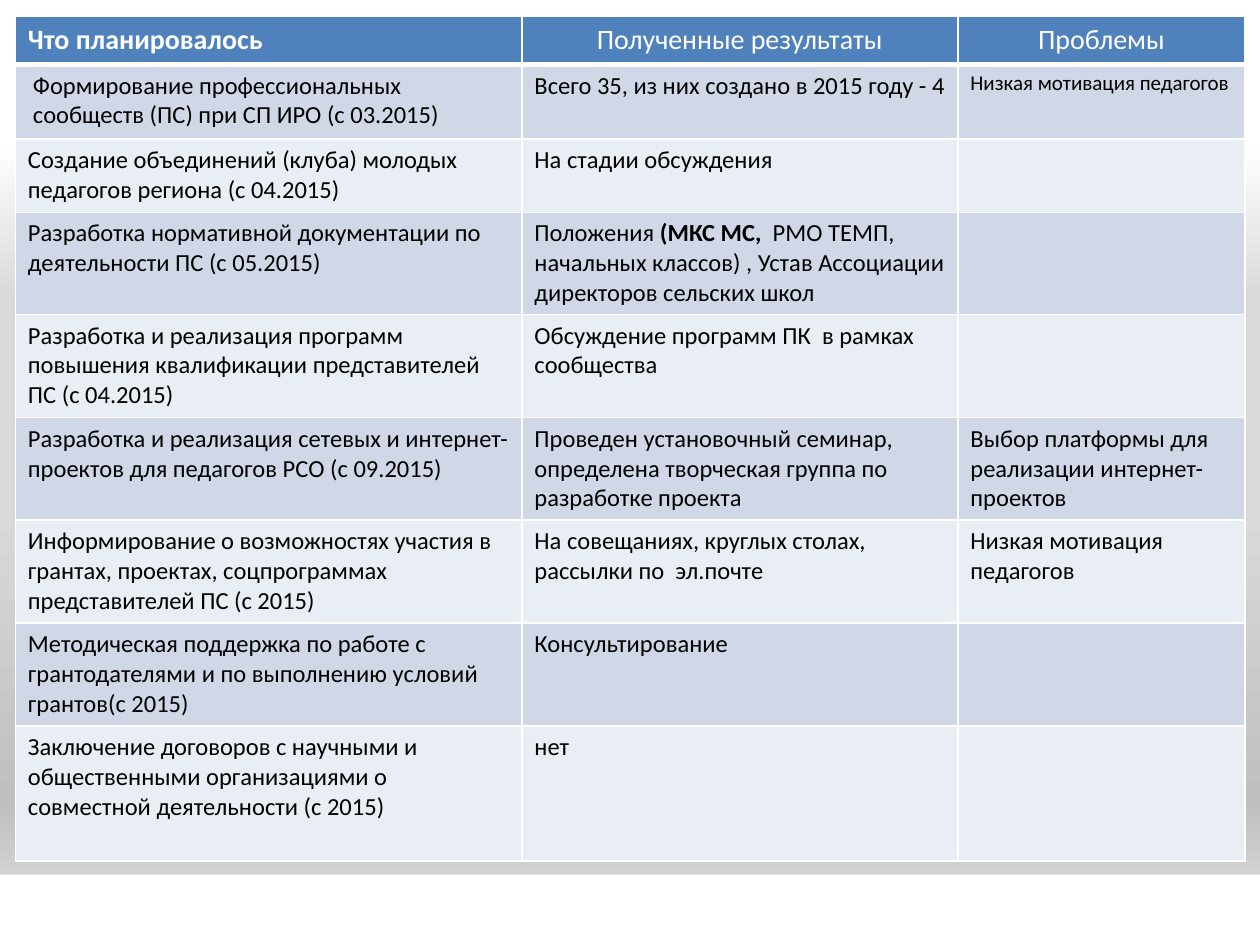
from dataclasses import dataclass

from lxml.etree import SubElement
from pptx import Presentation
from pptx.dml.color import RGBColor
from pptx.enum.shapes import MSO_SHAPE
from pptx.enum.text import PP_ALIGN
from pptx.oxml.ns import qn
from pptx.util import Cm, Pt


@dataclass(frozen=True)
class Theme:
    font: str = "Calibri"
    header_size: int = 16
    body_size: int = 14
    small_size: int = 12
    white: str = "FFFFFF"
    black: str = "000000"
    header_fill: str = "4F81BD"
    bands: tuple = ("D0D8E8", "E9EDF4")
    gradient: tuple = ((0, "FFFFFF"), (15, "FFFFFF"), (32, "D9D9D9"),
                       (54, "D9D9D9"), (85, "BFBFBF"), (100, "E6E6E6"))


THEME = Theme()
COLUMN_WIDTHS = (10.21, 8.79, 5.79)
ROW_HEIGHTS = (0.97, 1.5, 1.48, 2.06, 2.08, 2.06, 2.08, 2.08, 2.72)
HEADERS = ("Что планировалось", "Полученные результаты", "Проблемы")
ROWS = (
    ("Формирование профессиональных сообществ (ПС) при СП ИРО (с 03.2015)",
     "Всего 35, из них создано в 2015 году - 4",
     "Низкая мотивация педагогов"),
    ("Создание объединений (клуба) молодых педагогов региона (с 04.2015)",
     "На стадии обсуждения", ""),
    ("Разработка нормативной документации по деятельности ПС (с 05.2015)",
     (("Положения ", False), ("(МКС МС,  ", True),
      ("РМО ТЕМП, начальных классов) , Устав Ассоциации директоров сельских школ", False)), ""),
    ("Разработка и реализация программ повышения квалификации представителей ПС (с 04.2015)",
     "Обсуждение программ ПК  в рамках сообщества", ""),
    ("Разработка и реализация сетевых и интернет-проектов для педагогов РСО (с 09.2015)",
     "Проведен установочный семинар, определена творческая группа по разработке проекта",
     "Выбор платформы для реализации интернет-проектов"),
    ("Информирование о возможностях участия в грантах, проектах, соцпрограммах "
     "представителей ПС (с 2015)",
     "На совещаниях, круглых столах, рассылки по  эл.почте",
     "Низкая мотивация педагогов"),
    ("Методическая поддержка по работе с грантодателями и по выполнению условий "
     "грантов(с 2015)", "Консультирование", ""),
    ("Заключение договоров с научными и общественными организациями о совместной "
     "деятельности (с 2015)", "нет", ""),
)


def write_text(paragraph, text, size, color, bold=False, align=PP_ALIGN.LEFT,
               space_after=0, indent=0):
    if indent:
        properties = paragraph._p.get_or_add_pPr()
        properties.set("marL", str(Cm(indent)))
        properties.set("indent", "0")
    paragraph.alignment = align
    paragraph.space_after = Pt(space_after)
    paragraph.font.size = Pt(size)
    pieces = ((text, bold),) if isinstance(text, str) else text
    for words, is_bold in pieces:
        if words:
            run = paragraph.add_run()
            run.text = words
            run.font.name = THEME.font
            run.font.size = Pt(size)
            run.font.bold = is_bold
            run.font.color.rgb = RGBColor.from_string(color)


class SlideBuilder:
    def __init__(self, theme, slide):
        self.theme = theme
        self.slide = slide

    def background(self):
        fill = self.slide.background.fill
        fill.gradient()
        fill.gradient_angle = 270
        stops = fill.gradient_stops._gsLst
        for stop in list(stops):
            stops.remove(stop)
        for position, color in self.theme.gradient:
            stop = SubElement(stops, qn("a:gs"), pos=str(position * 1000))
            SubElement(stop, qn("a:srgbClr"), val=color)

    def rectangle(self, left, top, width, height, color):
        shape = self.slide.shapes.add_shape(
            MSO_SHAPE.RECTANGLE, Cm(left), Cm(top), Cm(width), Cm(height))
        shape.shadow.inherit = False
        shape.fill.solid()
        shape.fill.fore_color.rgb = RGBColor.from_string(color)
        shape.line.fill.background()

    def cell(self, cell, fill, bottom_width=1):
        properties = cell._tc.get_or_add_tcPr()
        for side, width in (("L", 1), ("R", 1), ("T", 1), ("B", bottom_width)):
            line = SubElement(properties, qn(f"a:ln{side}"), w=str(Pt(width)))
            solid = SubElement(line, qn("a:solidFill"))
            SubElement(solid, qn("a:srgbClr"), val=self.theme.white)
        cell.fill.solid()
        cell.fill.fore_color.rgb = RGBColor.from_string(fill)

    def table(self, left, top, headers, rows):
        theme = self.theme
        table = self.slide.shapes.add_table(
            len(rows) + 1, len(headers), Cm(left), Cm(top),
            Cm(sum(COLUMN_WIDTHS)), Cm(sum(ROW_HEIGHTS))).table
        for column, width in zip(table.columns, COLUMN_WIDTHS):
            column.width = Cm(width)
        for row, height in zip(table.rows, ROW_HEIGHTS):
            row.height = Cm(height)
        for column, text in enumerate(headers):
            cell = table.cell(0, column)
            self.cell(cell, theme.header_fill, bottom_width=3)
            write_text(cell.text_frame.paragraphs[0], text, theme.header_size, theme.white,
                       bold=column == 0,
                       align=PP_ALIGN.CENTER if column else PP_ALIGN.LEFT)
        for row, texts in enumerate(rows, start=1):
            for column, text in enumerate(texts):
                cell = table.cell(row, column)
                self.cell(cell, theme.bands[(row - 1) % 2])
                write_text(cell.text_frame.paragraphs[0], text,
                           theme.small_size if (row, column) == (1, 2) else theme.body_size,
                           theme.black,
                           space_after=10 if column == 0 and row >= 4 else 0,
                           indent=0.1 if (row, column) == (1, 0) else 0)


def main():
    presentation = Presentation()
    presentation.slide_width = Cm(25.4)
    presentation.slide_height = Cm(19.05)
    slide = presentation.slides.add_slide(presentation.slide_layouts[6])
    builder = SlideBuilder(THEME, slide)
    builder.background()
    builder.rectangle(0, 17.63, 25.42, 1.47, THEME.white)
    builder.table(0.31, 0.33, HEADERS, ROWS)
    presentation.save("out.pptx")


if __name__ == "__main__":
    main()
